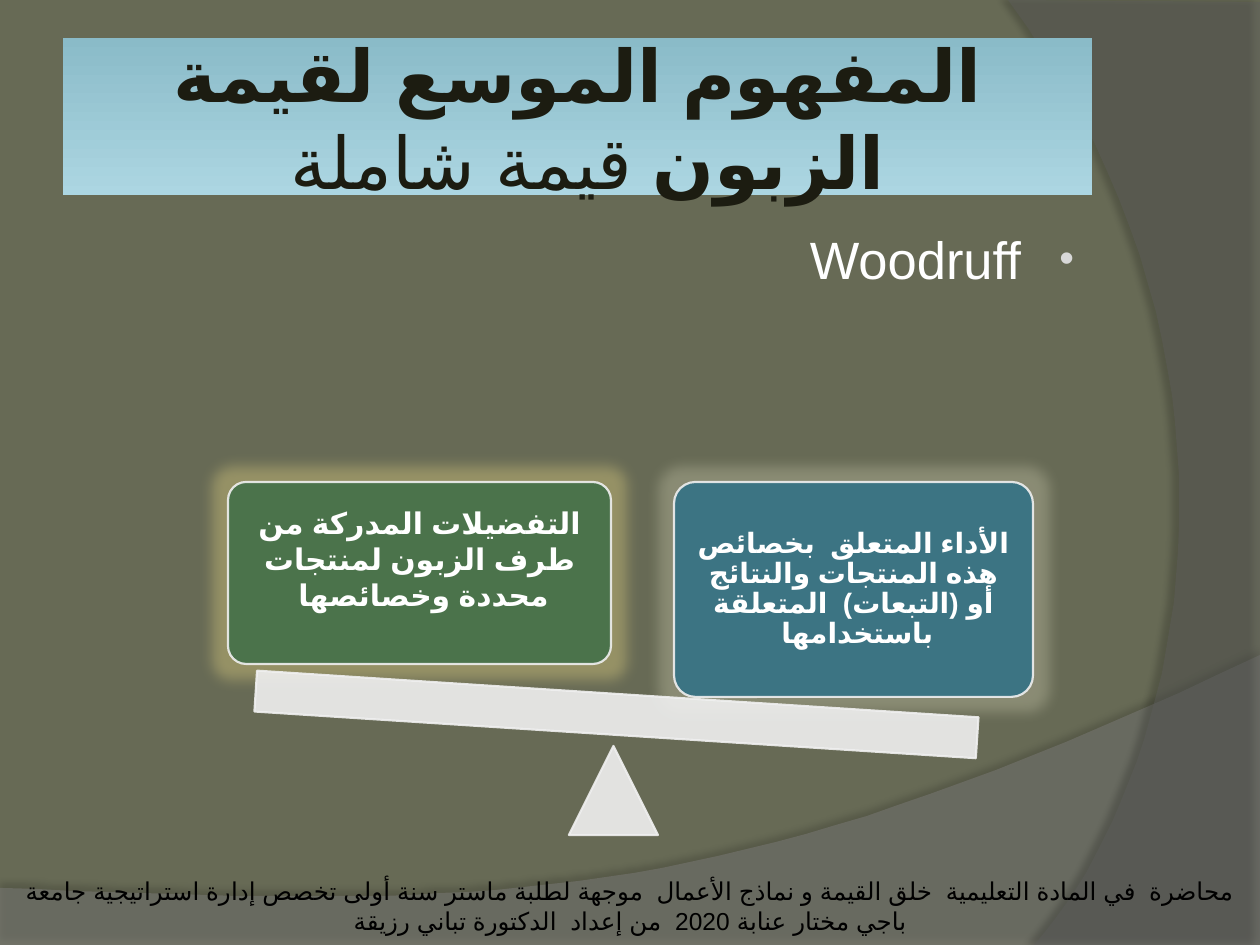
from lxml import etree
from pptx import Presentation
from pptx import util as u
from pptx.dml.color import RGBColor
from pptx.enum import lang, shapes, text
from pptx.oxml.ns import qn

PX = 914400 // 126
KIND = shapes.MSO_SHAPE
MID, LOW, TOP = text.MSO_ANCHOR.MIDDLE, text.MSO_ANCHOR.BOTTOM, text.MSO_ANCHOR.TOP
MIDDLE, RIGHT = text.PP_ALIGN.CENTER, text.PP_ALIGN.RIGHT
HUE = {"back": "676A55", "wave": "7F7F7F", "side": "5E5E5E", "ink": "1C1C11",
       "white": "FFFFFF", "black": "000000", "pale": "F0F0F0", "dot": "D8D8D8",
       "green": "4B734B", "teal": "3C7483", "gold": "CFC27A", "sand": "B5B59A",
       "light": "ACD6E2", "blue": "8ABBC8"}

TITLE = [("المفهوم الموسع لقيمة الزبون ", True), ("قيمة شاملة ", False)]
AUTHOR = [("Woodruff", False)]
FOOTER = [("محاضرة  في المادة التعليمية  خلق القيمة و نماذج الأعمال  موجهة لطلبة ماستر سنة أولى تخصص إدارة استراتيجية جامعة باجي مختار عنابة 2020  من إعداد  الدكتورة تباني رزيقة", False)]
CARDS = [
    ((228, 482, 383, 182), "green", "gold", 17, 1, 44,
     "التفضيلات المدركة من طرف الزبون لمنتجات محددة وخصائصها "),
    ((674, 482, 359, 215), "teal", "sand", 16, 0.9, 15,
     "الأداء المتعلق  بخصائص هذه المنتجات والنتائج أو (التبعات)  المتعلقة باستخدامها "),
]
SCALE = [(KIND.ISOSCELES_TRIANGLE, (569, 746, 89, 89), 0),
         (KIND.RECTANGLE, (255, 694, 723, 41), 3.7)]
WAVES = [
    ([(0, 946), (1260, 946)], [(1260, 655), (704, 919), (493, 906), (0, 888)],
     "wave", 45, 35, 44450, 270),
    ([(1260, 2), (1260, 945)], [(1034, 945), (1178, 780), (1283, 378), (1008, 0)],
     "side", 40, 45, 50800, 180),
]


def rgb(name):
    return RGBColor.from_string(HUE[name])


def sub(node, tag, **atts):
    return etree.SubElement(node, qn(tag), {k: str(v) for k, v in atts.items()})


def fade(node, pct):
    for tone in node.iter(qn("a:srgbClr")):
        sub(tone, "a:alpha", val=pct * 1000)


def effect(shape, tag, name, pct, **atts):
    box = shape._element.spPr.find(qn("a:effectLst"))
    tone = sub(sub(box, tag, **atts), "a:srgbClr", val=HUE[name])
    sub(tone, "a:alpha", val=pct * 1000)


def curve(a, b, c, d, steps=40):
    for i in range(steps + 1):
        t = i / steps
        s = 1 - t
        yield tuple(round(s**3 * p + 3 * s * s * t * q + 3 * s * t * t * r + t**3 * e)
                    for p, q, r, e in zip(a, b, c, d))


def shade(slide, edge, bend, name, pct, dark, dist, ang):
    pen = slide.shapes.build_freeform(*edge[0], scale=PX)
    pen.add_line_segments(edge[1:] + list(curve(*bend)))
    form = pen.convert_to_shape()
    form.shadow.inherit = False
    form.fill.solid()
    form.fill.fore_color.rgb = rgb(name)
    form.line.fill.background()
    fade(form._element.spPr, pct)
    effect(form, "a:outerShdw", "black", dark, blurRad=50800, dist=dist, dir=ang * 60000)


def block(slide, kind, at, name):
    shape = slide.shapes.add_shape(kind, *(n * PX for n in at))
    shape.shadow.inherit = False
    shape.fill.solid()
    shape.fill.fore_color.rgb = rgb(name)
    return shape


def rim(shape):
    shape.line.color.rgb = rgb("pale")
    shape.line.width = u.Pt(1.25)
    fade(shape._element.spPr.find(qn("a:ln")), 90)


def write(shape, parts, size, name, anchor, pads, align=MIDDLE):
    frame = shape.text_frame
    frame.word_wrap = True
    frame.vertical_anchor = anchor
    (frame.margin_left, frame.margin_top,
     frame.margin_right, frame.margin_bottom) = (n * PX for n in pads)
    para = frame.paragraphs[0]
    para.alignment = align
    para._p.get_or_add_pPr().set("rtl", "1")
    for words, bold in parts:
        run = para.add_run()
        run.text = words
        font = run.font
        font.name, font.size, font.bold = "Arial", u.Pt(size), bold
        font.language_id = lang.MSO_LANGUAGE_ID.ARABIC_ALGERIA
        font.color.rgb = rgb(name)
        sub(run._r.get_or_add_rPr(), "a:cs", typeface="Arial")
    return para


def label(slide, at, *args):
    return write(slide.shapes.add_textbox(*(n * PX for n in at)), *args)


def main():
    deck = Presentation()
    deck.slide_width, deck.slide_height = 1260 * PX, 945 * PX
    slide = deck.slides.add_slide(deck.slide_layouts[6])
    slide.background.fill.solid()
    slide.background.fill.fore_color.rgb = rgb("back")
    for wave in WAVES:
        shade(slide, *wave)

    head = block(slide, KIND.RECTANGLE, (63, 38, 1029, 157), "light")
    head.line.fill.background()
    head.fill.gradient()
    head.fill.gradient_angle = 90
    for stop, name in zip(head.fill.gradient_stops, ("light", "blue")):
        stop.color.rgb = rgb(name)
    write(head, TITLE, 41.4, "ink", MID, (6, 6, 6, 6))

    para = label(slide, (63, 221, 1029, 624), AUTHOR, 30, "white", TOP,
                 (13, 6, 13, 6), RIGHT)
    para.space_before = u.Pt(6)
    props = para._p.get_or_add_pPr()
    props.set("marL", str(58 * PX))
    props.set("indent", str(-53 * PX))
    sub(sub(props, "a:buClr"), "a:srgbClr", val=HUE["dot"])
    sub(props, "a:buSzPct", val=80000)
    sub(props, "a:buFont", typeface="Arial")
    sub(props, "a:buChar", char="•")

    for at, name, glow, size, gap, base, words in CARDS:
        card = block(slide, KIND.ROUNDED_RECTANGLE, at, name)
        card.adjustments[0] = 0.1
        rim(card)
        effect(card, "a:glow", glow, 45, rad=28 * PX)
        write(card, [(words, True)], size, "white", MID,
              (12, 15, 12, base)).line_spacing = gap

    for kind, at, turn in SCALE:
        part = block(slide, kind, at, "pale")
        fade(part._element.spPr, 90)
        rim(part)
        part.rotation = turn

    label(slide, (15, 885, 1230, 50), FOOTER, 14, "black", LOW, (0, 6, 0, 0))
    deck.save("out.pptx")


if __name__ == "__main__":
    main()
